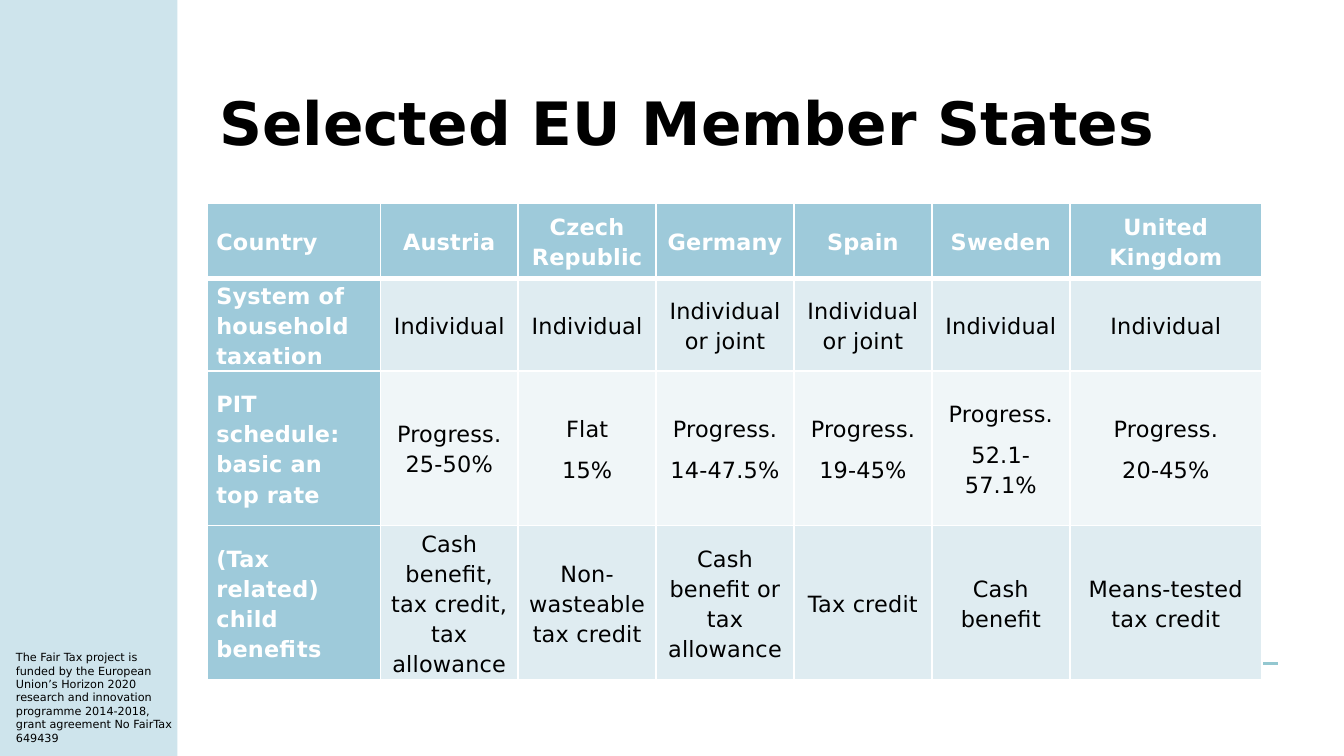
from copy import deepcopy
from dataclasses import dataclass

from lxml.etree import SubElement
from pptx import Presentation
from pptx.dml.color import RGBColor
from pptx.enum.shapes import MSO_CONNECTOR, MSO_SHAPE
from pptx.enum.text import MSO_ANCHOR, MSO_AUTO_SIZE, PP_ALIGN
from pptx.oxml.ns import qn
from pptx.util import Inches, Pt

FONT = "DejaVu Sans"
COLORS = {
    "accent": "9ECADA",
    "rule": "93C7D0",
    "band_dark": "DFECF1",
    "band_light": "F0F6F8",
    "white": "FFFFFF",
    "black": "000000",
}
SLIDE_WIDTH = 10
SLIDE_HEIGHT = SLIDE_WIDTH * 9 / 16
TABLE_WIDTH, TABLE_HEIGHT = 7.85, 3.56
LABEL_WIDTH, LAST_WIDTH = 1.29, 1.43
MIDDLE_WIDTH = (TABLE_WIDTH - LABEL_WIDTH - LAST_WIDTH) / 5
COLUMN_WIDTHS = [LABEL_WIDTH] + [MIDDLE_WIDTH] * 5 + [LAST_WIDTH]


@dataclass
class TableRow:
    height: float
    fill: str
    texts: list[str]


ROWS = [
    TableRow(0.56, "accent", ["Country", "Austria", "Czech Republic", "Germany",
                              "Spain", "Sweden", "United Kingdom"]),
    TableRow(0.37, "band_dark", ["System of household taxation", "Individual", "Individual",
                                 "Individual or joint", "Individual or joint",
                                 "Individual", "Individual"]),
    TableRow(1.15, "band_light", ["PIT schedule: basic an top rate", "Progress.\v25-50%",
                                  "Flat\n15%", "Progress.\n14-47.5%", "Progress.\n19-45%",
                                  "Progress.\n52.1-57.1%", "Progress.\n20-45%"]),
    TableRow(0.56, "band_dark", ["(Tax related) child benefits",
                                 "Cash benefit, tax credit, tax allowance",
                                 "Non-wasteable tax credit", "Cash benefit or tax allowance",
                                 "Tax credit", "Cash benefit", "Means-tested tax credit"]),
]


def color(name: str) -> RGBColor:
    return RGBColor.from_string(COLORS[name])


def write_text(frame, text: str, *, size: float, fill: str = "black", bold: bool = False,
               align=PP_ALIGN.LEFT, line_spacing: float = 1.0, space_after: float = 0,
               tracking: float = 0) -> None:
    frame.word_wrap = True
    frame.text = text
    for paragraph in frame.paragraphs:
        paragraph.alignment = align
        paragraph.line_spacing = line_spacing
        paragraph.space_before = Pt(0)
        paragraph.space_after = Pt(space_after)
        for run in paragraph.runs:
            run.font.name = FONT
            run.font.size = Pt(size)
            run.font.bold = bold
            run.font.color.rgb = color(fill)
            if tracking:
                run.font._element.set("spc", str(round(tracking * 100)))
        for line_break in paragraph._p.findall(qn("a:br")):
            line_break.insert(0, deepcopy(paragraph.runs[0].font._element))


def draw_borders(cell, widths: dict[str, float]) -> None:
    properties = cell._tc.get_or_add_tcPr()
    for side, width in widths.items():
        line = SubElement(properties, qn(f"a:ln{side}"), w=str(Pt(width)))
        solid = SubElement(line, qn("a:solidFill"))
        SubElement(solid, qn("a:srgbClr"), val=COLORS["white"])


def draw_side_band(slide) -> None:
    band = slide.shapes.add_shape(MSO_SHAPE.RECTANGLE, 0, 0, Inches(1.32),
                                  Inches(SLIDE_HEIGHT))
    band.shadow.inherit = False
    band.fill.solid()
    band.fill.fore_color.rgb = color("accent")
    band.line.fill.background()
    fill_color = band._element.spPr.find(qn("a:solidFill")).find(qn("a:srgbClr"))
    SubElement(fill_color, qn("a:alpha"), val="50000")


def draw_rule(slide) -> None:
    rule = slide.shapes.add_connector(MSO_CONNECTOR.STRAIGHT, Inches(1.64), Inches(4.94),
                                      Inches(9.51), Inches(4.94))
    rule.line.color.rgb = color("rule")
    rule.line.width = Pt(1.5)
    SubElement(rule._element.spPr, qn("a:effectLst"))


def draw_funding_note(slide) -> None:
    note = slide.shapes.add_textbox(Inches(0.02), Inches(4.79), Inches(1.38), Inches(0.81))
    write_text(note.text_frame,
               "The Fair Tax project is funded by the European Union’s Horizon 2020 research "
               "and innovation programme 2014-2018, grant agreement No FairTax 649439", size=6)
    note.text_frame.auto_size = MSO_AUTO_SIZE.SHAPE_TO_FIT_TEXT


def place_title(slide) -> None:
    title = slide.shapes.title
    title.left, title.top = Inches(1.53), Inches(0.65)
    title.width, title.height = Inches(7.98), Inches(0.58)
    write_text(title.text_frame, "Selected EU Member States", size=32, bold=True,
               line_spacing=0.9)
    title.text_frame.vertical_anchor = MSO_ANCHOR.MIDDLE
    title.text_frame.auto_size = MSO_AUTO_SIZE.NONE


def draw_country_table(slide) -> None:
    table_frame = slide.shapes.add_table(
        len(ROWS), len(COLUMN_WIDTHS), Inches(1.54), Inches(1.51),
        Inches(TABLE_WIDTH), Inches(TABLE_HEIGHT))
    table = table_frame.table
    for column, width in zip(table.columns, COLUMN_WIDTHS):
        column.width = Inches(width)
    for row_index, row in enumerate(ROWS):
        table.rows[row_index].height = Inches(row.height)
        for column_index, text in enumerate(row.texts):
            cell = table.cell(row_index, column_index)
            is_label = column_index == 0
            is_heading = is_label or row_index == 0
            cell.margin_left = cell.margin_right = Inches(0.07)
            cell.margin_top = cell.margin_bottom = 0
            cell.vertical_anchor = MSO_ANCHOR.MIDDLE
            draw_borders(cell, {"L": 1, "R": 1, "T": 3 if row_index == 1 else 1,
                                "B": 3 if row_index == 0 else 1})
            cell.fill.solid()
            cell.fill.fore_color.rgb = color("accent" if is_heading else row.fill)
            write_text(cell.text_frame, text, size=12, bold=is_heading,
                       fill="white" if is_heading else "black",
                       align=PP_ALIGN.LEFT if is_label else PP_ALIGN.CENTER,
                       line_spacing=1.15, space_after=6, tracking=0.1)
    table_frame.height = Inches(TABLE_HEIGHT)


def main() -> None:
    presentation = Presentation()
    presentation.slide_width = Inches(SLIDE_WIDTH)
    presentation.slide_height = Inches(SLIDE_HEIGHT)
    slide = presentation.slides.add_slide(presentation.slide_layouts[5])
    draw_side_band(slide)
    draw_rule(slide)
    draw_funding_note(slide)
    place_title(slide)
    draw_country_table(slide)
    presentation.save("out.pptx")


if __name__ == "__main__":
    main()
